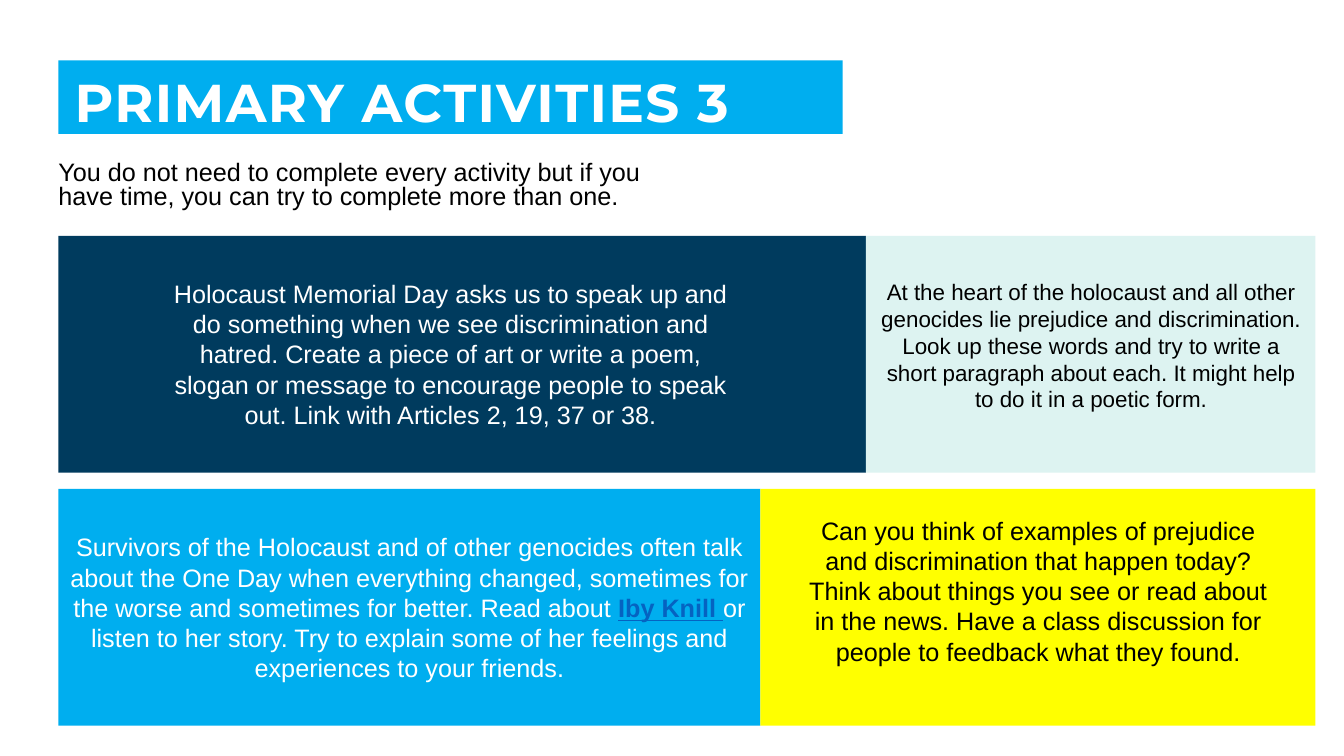
from pptx import Presentation
from pptx.dml.color import RGBColor
from pptx.enum.shapes import MSO_SHAPE
from pptx.enum.text import MSO_ANCHOR, PP_ALIGN
from pptx.util import Pt

COLORS = {
    "white": "FFFFFF",
    "black": "000000",
    "sky": "00AEEF",
    "navy": "003B5E",
    "mint": "DDF3F1",
    "yellow": "FFFF00",
    "link": "0563C1",
}
LEFT, RIGHT = 41.76, 939.6
TOP_ROW, BOTTOM_ROW, ROW_HEIGHT = 168.48, 349.2, 169.2
TOP_SPLIT, BOTTOM_SPLIT = 618.48, 543.2


def write(para, text, size=18, color="black", font="Arial", bold=False,
          underline=False, tracking=0):
    span = para.add_run()
    span.text = text
    span.font.name = font
    span.font.size = Pt(size)
    span.font.bold = bold
    span.font.underline = underline
    span.font.color.rgb = RGBColor.from_string(COLORS[color])
    if tracking:
        span._r.get_or_add_rPr().set("spc", str(tracking * 100))


class ActivityPage:
    def __init__(self, deck):
        self.page = deck.slides.add_slide(deck.slide_layouts[6])

    def panel(self, left, top, right, height, color):
        box = self.page.shapes.add_shape(
            MSO_SHAPE.RECTANGLE, Pt(left), Pt(top), Pt(right - left), Pt(height))
        box.shadow.inherit = False
        box.fill.solid()
        box.fill.fore_color.rgb = RGBColor.from_string(COLORS[color])
        box.line.fill.background()
        return box

    def text_box(self, left, top, width, height):
        return self.page.shapes.add_textbox(Pt(left), Pt(top), Pt(width), Pt(height))

    def paragraph(self, box, align=PP_ALIGN.CENTER, anchor=MSO_ANCHOR.TOP,
                  insets=(7.2, 3.6, 7.2, 3.6), line_spacing=1.0):
        frame = box.text_frame
        frame.word_wrap = True
        frame.vertical_anchor = anchor
        (frame.margin_left, frame.margin_top,
         frame.margin_right, frame.margin_bottom) = map(Pt, insets)
        para = frame.paragraphs[0]
        para.alignment = align
        para.line_spacing = line_spacing
        return para


def main():
    deck = Presentation()
    deck.slide_width, deck.slide_height = Pt(960), Pt(540)
    page = ActivityPage(deck)

    title = page.panel(LEFT, 43.2, 601.92, 52.56, "sky")
    para = page.paragraph(title, PP_ALIGN.LEFT, MSO_ANCHOR.MIDDLE,
                          (11.52, 11.52, 8.64, 0), 0.9)
    write(para, "PRIMARY ACTIVITIES 3", size=38, color="white",
          font="Montserrat", bold=True, tracking=1)

    intro = page.text_box(LEFT, 112.32, 447.12, 44.64)
    para = page.paragraph(intro, PP_ALIGN.LEFT, insets=(0, 3.6, 7.2, 3.6),
                          line_spacing=0.8)
    write(para, "You do not need to complete every activity but if you have time, "
                "you can try to complete more than one.")

    page.panel(LEFT, TOP_ROW, TOP_SPLIT, ROW_HEIGHT, "navy")
    page.panel(TOP_SPLIT, TOP_ROW, RIGHT, ROW_HEIGHT, "mint")
    survivors = page.panel(LEFT, BOTTOM_ROW, BOTTOM_SPLIT, ROW_HEIGHT, "sky")
    page.panel(BOTTOM_SPLIT, BOTTOM_ROW, RIGHT, ROW_HEIGHT, "yellow")

    para = page.paragraph(survivors, anchor=MSO_ANCHOR.MIDDLE)
    write(para, "Survivors of the Holocaust and of other genocides often talk about "
                "the One Day when everything changed, sometimes for the worse and "
                "sometimes for better. Read about ", color="white")
    write(para, "Iby Knill ", color="link", bold=True, underline=True)
    write(para, "or listen to her story. Try to explain some of her feelings and "
                "experiences to your friends.", color="white")

    activities = [
        ((109.44, 195.12, 424.8, 116.64), 18, "white",
         "Holocaust Memorial Day asks us to speak up and do something when we see "
         "discrimination and hatred. Create a piece of art or write a poem, slogan "
         "or message to encourage people to speak out. Link with Articles 2, 19, "
         "37 or 38."),
        ((622.08, 195.12, 314.64, 104.4), 16, "black",
         "At the heart of the holocaust and all other genocides lie prejudice and "
         "discrimination. Look up these words and try to write a short paragraph "
         "about each. It might help to do it in a poetic form."),
        ((563.04, 364.32, 357.12, 116.64), 18, "black",
         "Can you think of examples of prejudice and discrimination that happen "
         "today? Think about things you see or read about in the news. Have a class "
         "discussion for people to feedback what they found."),
    ]
    for bounds, size, color, text in activities:
        para = page.paragraph(page.text_box(*bounds))
        write(para, text, size=size, color=color)

    deck.save("out.pptx")


if __name__ == "__main__":
    main()
